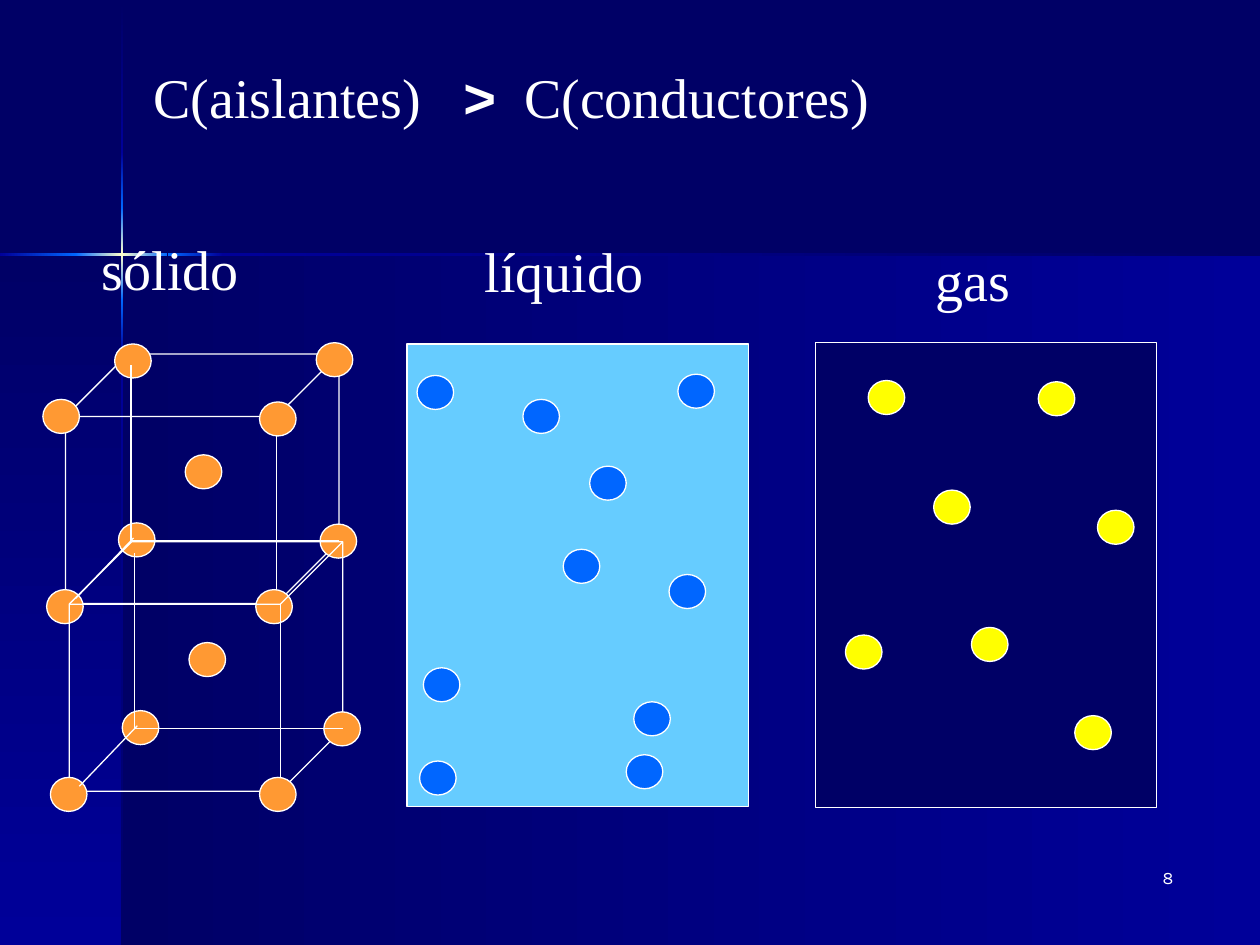
from copy import deepcopy
from dataclasses import dataclass

from pptx import Presentation
from pptx.dml.color import RGBColor
from pptx.enum.shapes import MSO_CONNECTOR, MSO_SHAPE
from pptx.enum.text import MSO_AUTO_SIZE, PP_ALIGN
from pptx.oxml.ns import qn
from pptx.util import Inches, Pt

RECT, CUBE, OVAL = MSO_SHAPE.RECTANGLE, MSO_SHAPE.CUBE, MSO_SHAPE.OVAL
STRAIGHT = MSO_CONNECTOR.STRAIGHT
FIT_SHAPE, FIXED = MSO_AUTO_SIZE.SHAPE_TO_FIT_TEXT, MSO_AUTO_SIZE.NONE
LEFT, RIGHT = PP_ALIGN.LEFT, PP_ALIGN.RIGHT


@dataclass
class Theme:
    navy: str = "000066"
    indigo: str = "000099"
    blue: str = "0066FF"
    glow: str = "FFFFCC"
    white: str = "FFFFFF"
    water: str = "66CCFF"
    orange: str = "FF9933"
    yellow: str = "FFFF00"
    serif: str = "Times New Roman"
    sans: str = "Arial"
    number_font: str = "Karla"
    heading: int = 32
    number: int = 10
    outline: float = 0.75


theme = Theme()
rgb = RGBColor.from_string

prs = Presentation()
prs.slide_width, prs.slide_height = Inches(10), Inches(7.5)
slide = prs.slides.add_slide(prs.slide_layouts[6])
shapes = slide.shapes
slide.background.fill.solid()
slide.background.fill.fore_color.rgb = rgb(theme.navy)


def outlined(kind, x, y, width, height, fill=None):
    shape = shapes.add_shape(kind, Inches(x), Inches(y), Inches(width), Inches(height))
    shape.shadow.inherit = False
    if fill:
        shape.fill.solid()
        shape.fill.fore_color.rgb = rgb(fill)
    else:
        shape.fill.background()
    shape.line.color.rgb = rgb(theme.white)
    shape.line.width = Pt(theme.outline)
    return shape


def write(x, y, width, height, runs, size, align=LEFT, fit=FIT_SHAPE):
    box = shapes.add_textbox(Inches(x), Inches(y), Inches(width), Inches(height))
    box.text_frame.word_wrap = True
    box.text_frame.auto_size = fit
    paragraph = box.text_frame.paragraphs[0]
    paragraph.alignment = align
    for text, font, bold in runs:
        run = paragraph.add_run()
        run.text = text
        run.font.name, run.font.bold, run.font.size = font, bold, Pt(size)
        run.font.color.rgb = rgb(theme.white)


# Background panels and glowing cross: box, gradient colours, angle
ACROSS, DOWN = 0, 270
dim = [theme.navy, theme.indigo]
rise = [theme.indigo, theme.blue]
flare = [theme.blue, theme.glow, theme.blue]
backdrop = [
    (0.97, 2.02, 9.03, 5.48, dim, ACROSS),
    (0, 2.02, 0.97, 5.48, dim, DOWN),
    (0.96, 0.01, 0.02, 1.2, dim, DOWN),
    (0.96, 2.82, 0.02, 4.68, dim[::-1], DOWN),
    (1.77, 2.01, 8.23, 0.02, dim[::-1], ACROSS),
    (0.96, 2.38, 0.02, 0.44, rise[::-1], DOWN),
    (0.96, 1.21, 0.02, 0.44, rise, DOWN),
    (0.96, 1.65, 0.02, 0.73, flare, DOWN),
    (0, 2.01, 0.61, 0.02, rise, ACROSS),
    (1.33, 2.01, 0.44, 0.02, rise[::-1], ACROSS),
    (0.6, 2.01, 0.73, 0.02, flare, ACROSS),
]
for x, y, width, height, colors, angle in backdrop:
    band = outlined(RECT, x, y, width, height)
    band.line.fill.background()
    band.fill.gradient()
    band.fill.gradient_angle = angle
    stop_list = band._element.spPr.find(".//" + qn("a:gsLst"))
    for _ in colors[2:]:
        stop_list.append(deepcopy(stop_list[0]))
    for i, (stop, color) in enumerate(zip(band.fill.gradient_stops, colors)):
        stop.position = i / (len(colors) - 1)
        stop.color.rgb = rgb(color)

# Title
write(1.12, 0.45, 6.98, 0.63, [
    ("C(aislantes)   ", theme.serif, False),
    (">", theme.sans, True),
    ("  C(conductores)", theme.serif, False),
], theme.heading)

# Containers of the liquid and the gas
outlined(RECT, 3.23, 2.73, 2.71, 3.67, theme.water)
outlined(RECT, 6.47, 2.72, 2.71, 3.69, theme.navy)

# Solid: two stacked unit cells, the lower one sharing the middle layer of atoms
ATOM = (0.29, 0.27)
top_atoms = [(2.06, 3.19), (2.51, 2.72), (0.91, 2.73), (0.34, 3.17)]
cell_atoms = [(0.37, 4.68), (0.94, 4.15), (2.03, 4.68), (2.54, 4.16), (1.47, 3.61)]
for dx, dy, atoms in [(0, 0, top_atoms + cell_atoms), (0.03, 1.49, cell_atoms)]:
    outlined(CUBE, 0.52 + dx, 2.81 + dy, 2.17, 1.98).adjustments[0] = 0.25
    for x, y in atoms:
        outlined(OVAL, x + dx, y + dy, *ATOM, theme.orange)

    # Hidden edges of the cell
    corner, *ends = [(Inches(x + dx), Inches(y + dy))
                     for x, y in [(1.04, 2.9), (1.04, 4.29), (2.69, 4.29)]]
    builder = shapes.build_freeform(*corner)
    builder.add_line_segments(ends, close=False)
    back_edges = builder.convert_to_shape()
    back_edges.shadow.inherit = False
    back_edges.fill.background()
    depth_edge = shapes.add_connector(STRAIGHT, Inches(1.06 + dx), Inches(4.27 + dy),
                                      Inches(0.6 + dx), Inches(4.75 + dy))
    depth_edge._element.spPr.get_or_add_ln()
    for edge in (back_edges, depth_edge):
        edge.line.color.rgb = rgb(theme.white)
        edge.line.width = Pt(theme.outline)
    depth_edge._element.spPr.append(
        depth_edge._element.makeelement(qn("a:effectLst"), {}))

# Particles of the liquid and the gas
liquid = [(4.47, 4.36), (3.33, 6.04), (5.38, 2.97), (3.31, 2.98), (5.03, 5.57), (5.31, 4.56),
          (3.36, 5.3), (4.68, 3.7), (4.15, 3.17), (4.97, 5.99)]
gas = [(6.89, 3.02), (8.71, 4.05), (8.24, 3.03), (7.71, 4.98), (8.53, 5.68), (6.71, 5.04),
       (7.41, 3.89)]
for particles, color in [(liquid, theme.blue), (gas, theme.yellow)]:
    for x, y in particles:
        outlined(OVAL, x, y, *ATOM, color)

# State names
for name, x, y, width in [("sólido", 0.71, 1.81, 2.17), ("líquido", 3.75, 1.83, 2.19),
                          ("gas", 7.33, 1.9, 1.06)]:
    write(x, y, width, 0.63, [(name, theme.serif, False)], theme.heading)

# Slide number
write(7.33, 6.83, 2.08, 0.5, [("8", theme.number_font, False)], theme.number, RIGHT, FIXED)

prs.save("out.pptx")
